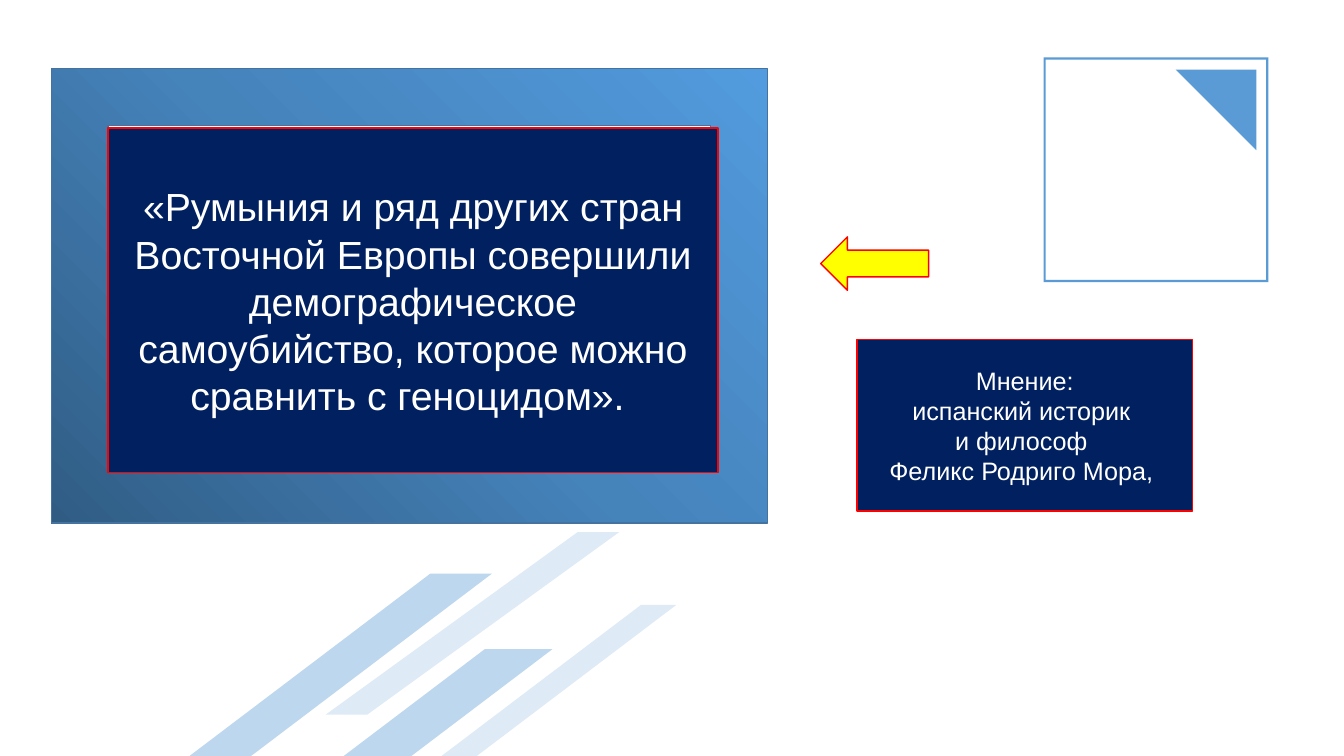
import pptx
import pptx.dml.color
import pptx.enum.shapes
import pptx.enum.text
import pptx.oxml
import pptx.oxml.ns
import pptx.util

PX = 9144  # EMU per px, 100 px to the inch
SHAPE = pptx.enum.shapes.MSO_SHAPE
BLUE, NAVY, RED, YELLOW, WHITE = "5B9BD5", "002060", "FF0000", "FFFF00", "FFFFFF"
FRAME_EDGE = "43739E"
FRAME_STOPS = [(0, "305C84"), (50, "4583BB"), (100, "529BDE")]


def color(value):
    return pptx.dml.color.RGBColor.from_string(value)


def add_shape(page, kind, box, fill, edge=None, adjust=None):
    shape = page.shapes.add_shape(kind, *(length * PX for length in box))
    shape.shadow.inherit = False
    shape.fill.solid()
    shape.fill.fore_color.rgb = color(fill)
    if edge:
        shape.line.color.rgb = color(edge)
        shape.line.width = pptx.util.Pt(1)
    else:
        shape.line.fill.background()
    if adjust is not None:
        shape.adjustments[0] = adjust
    return shape


def set_opacity(shape, percent):
    tint = shape.fill._xPr.find(".//" + pptx.oxml.ns.qn("a:srgbClr"))
    alpha = tint.makeelement(pptx.oxml.ns.qn("a:alpha"), {"val": str(percent * 1000)})
    tint.append(alpha)


def set_corner_gradient(shape, stops):
    """Circular gradient spreading from the bottom left corner."""
    marks = "".join(
        f'<a:gs pos="{at * 1000}"><a:srgbClr val="{value}"/></a:gs>' for at, value in stops
    )
    gradient = pptx.oxml.parse_xml(
        f'<a:gradFill {pptx.oxml.ns.nsdecls("a")} rotWithShape="1"><a:gsLst>{marks}</a:gsLst>'
        '<a:path path="circle"><a:fillToRect t="100000" r="100000"/></a:path></a:gradFill>'
    )
    solid = shape.fill._xPr.find(pptx.oxml.ns.qn("a:solidFill"))
    solid.getparent().replace(solid, gradient)


def add_text_panel(page, box, lines, size):
    panel = add_shape(page, SHAPE.RECTANGLE, box, NAVY, RED)
    frame = panel.text_frame
    frame.word_wrap = True
    frame.vertical_anchor = pptx.enum.text.MSO_ANCHOR.MIDDLE
    for index, line in enumerate(lines):
        para = frame.paragraphs[0] if index == 0 else frame.add_paragraph()
        para.text = line
        para.alignment = pptx.enum.text.PP_ALIGN.CENTER
        para.font.name = "Arial"
        para.font.size = pptx.util.Pt(size)
        para.font.color.rgb = color(WHITE)


def add_stripes(page, box):
    left, top, _, _ = box
    stripes = [
        (0, 41, 300, 181, 1.32, 40),
        (153, 116, 207, 106, 1.32, 40),
        (135, 0, 291, 181, 1.38, 20),
        (250, 72, 233, 150, 1.32, 20),
    ]
    for x, y, width, height, slant, opacity in stripes:
        stripe = add_shape(page, SHAPE.PARALLELOGRAM, (left + x, top + y, width, height),
                           BLUE, adjust=slant)
        set_opacity(stripe, opacity)


def add_corner_frame(page, box):
    left, top, width, _ = box
    gap, side = 12, 80
    corner = add_shape(page, SHAPE.RIGHT_TRIANGLE,
                       (left + width - gap - side, top + gap, side, side), BLUE)
    corner.rotation = 180
    add_shape(page, SHAPE.FRAME, box, BLUE, adjust=0.01)


def add_quote(page, box):
    left, top, _, _ = box
    border = add_shape(page, SHAPE.FRAME, box, BLUE, FRAME_EDGE)
    set_corner_gradient(border, FRAME_STOPS)
    quote = ("«Румыния и ряд других стран Восточной Европы совершили демографическое "
             "самоубийство, которое можно сравнить с геноцидом». ")
    add_text_panel(page, (left + 56, top + 59, 605, 342), [quote], 28)


def add_author(page, box):
    lines = ["Мнение:", "испанский историк ", "и философ ", "Феликс Родриго Мора, "]
    add_text_panel(page, box, lines, 18)


def build_quote_slide(deck):
    page = deck.slides.add_slide(deck.slide_layouts[6])
    add_stripes(page, (188, 528, 483, 222))
    add_corner_frame(page, (1035, 57, 223, 223))
    add_quote(page, (51, 68, 710, 451))
    add_author(page, (850, 337, 333, 170))
    # Arrow from the author to the quote
    add_shape(page, SHAPE.LEFT_ARROW, (814, 235, 107, 53), YELLOW, RED)


def main():
    deck = pptx.Presentation()
    deck.slide_width, deck.slide_height = 1333 * PX, 750 * PX
    build_quote_slide(deck)
    deck.save("out.pptx")


if __name__ == "__main__":
    main()
